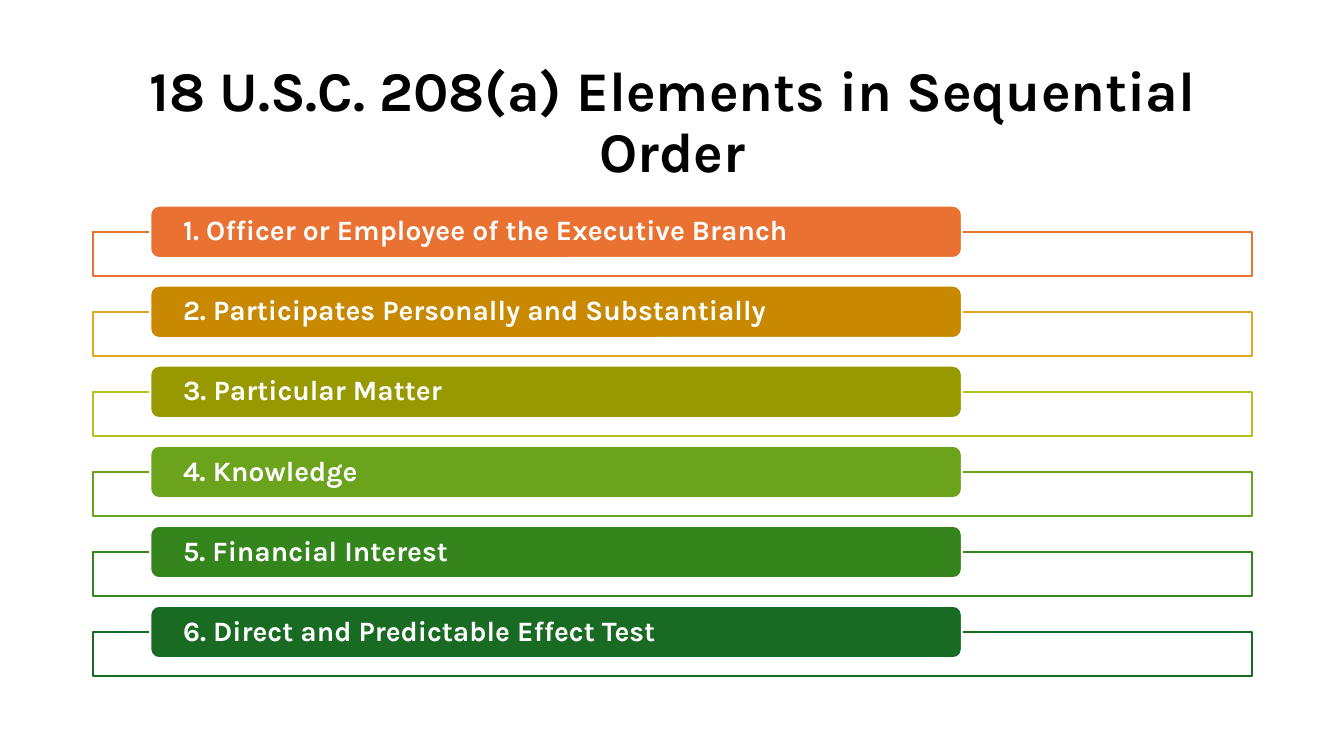
"""Build a slide listing the elements of 18 U.S.C. 208(a) in order."""
from dataclasses import dataclass

from lxml import etree
from pptx import Presentation, util as u
from pptx.dml.color import RGBColor
from pptx.enum import shapes, text
from pptx.oxml import ns
from pptx.shapes.autoshape import Shape
from pptx.slide import Slide
from pptx.text.text import TextFrame

FONT = "Karla"
BLACK = RGBColor(0x00, 0x00, 0x00)
WHITE = RGBColor(0xFF, 0xFF, 0xFF)
ORANGE = RGBColor(0xE9, 0x71, 0x32)
AMBER = RGBColor(0xC8, 0x88, 0x00)
GOLD = RGBColor(0xE0, 0xA6, 0x1D)
OLIVE = RGBColor(0x98, 0x98, 0x00)
LIME = RGBColor(0xB7, 0xC1, 0x1E)
LEAF = RGBColor(0x6B, 0xA3, 0x1D)
GREEN = RGBColor(0x34, 0x86, 0x1C)
FOREST = RGBColor(0x19, 0x6B, 0x24)

LEFT, WIDTH = 0.92, 11.5
FIRST_TOP, LAST_TOP, FRAME_HEIGHT = 2.3, 6.27, 0.44
BAR_LEFT, BAR_WIDTH, BAR_HEIGHT, BAR_RISE = 1.49, 8.05, 0.52, 0.26


@dataclass(frozen=True)
class Element:
    label: str
    bar: RGBColor
    frame: RGBColor


ELEMENTS = [
    Element("1. Officer or Employee of the Executive Branch", ORANGE, ORANGE),
    Element("2. Participates Personally and Substantially", AMBER, GOLD),
    Element("3. Particular Matter", OLIVE, LIME),
    Element("4. Knowledge", LEAF, LEAF),
    Element("5. Financial Interest", GREEN, GREEN),
    Element("6. Direct and Predictable Effect Test", FOREST, FOREST),
]


def write(tf: TextFrame, words: str, size: int, color: RGBColor,
          align: text.PP_ALIGN) -> None:
    """Set one bold, vertically centred paragraph."""
    tf.word_wrap = True
    tf.vertical_anchor = text.MSO_ANCHOR.MIDDLE
    p = tf.paragraphs[0]
    p.text = words
    p.alignment = align
    p.line_spacing = 0.9
    p.font.name = FONT
    p.font.size = u.Pt(size)
    p.font.bold = True
    p.font.color.rgb = color


def add_box(s: Slide, kind: shapes.MSO_SHAPE, left: float, top: float,
            width: float, height: float, fill: RGBColor, line: RGBColor) -> Shape:
    """Add a flat shape with a solid fill and outline."""
    sp = s.shapes.add_shape(kind, u.Inches(left), u.Inches(top),
                            u.Inches(width), u.Inches(height))
    sp.shadow.inherit = False
    sp.fill.solid()
    sp.fill.fore_color.rgb = fill
    sp.line.color.rgb = line
    sp.line.width = u.Pt(1.5)
    return sp


def add_element(s: Slide, element: Element, top: float) -> None:
    """Draw an outlined frame with its labelled bar on the top edge."""
    frame = add_box(s, shapes.MSO_SHAPE.RECTANGLE, LEFT, top, WIDTH,
                    FRAME_HEIGHT, WHITE, element.frame)
    color = frame.fill._xPr.find(ns.qn("a:solidFill"))[0]
    etree.SubElement(color, ns.qn("a:alpha"), val="90000")

    bar = add_box(s, shapes.MSO_SHAPE.ROUNDED_RECTANGLE, BAR_LEFT,
                  top - BAR_RISE, BAR_WIDTH, BAR_HEIGHT, element.bar, WHITE)
    tf = bar.text_frame
    tf.margin_left = tf.margin_right = u.Inches(0.3)
    tf.margin_top = tf.margin_bottom = 0
    write(tf, element.label, 20, WHITE, text.PP_ALIGN.LEFT)


def main() -> None:
    """Create and save the presentation."""
    prs = Presentation()
    prs.slide_width, prs.slide_height = u.Inches(13.33), u.Inches(7.5)
    s = prs.slides.add_slide(prs.slide_layouts[6])

    title = s.shapes.add_textbox(u.Inches(LEFT), u.Inches(0.61),
                                 u.Inches(WIDTH), u.Inches(1.24))
    write(title.text_frame, "18 U.S.C. 208(a) Elements in Sequential Order",
          40, BLACK, text.PP_ALIGN.CENTER)

    pitch = (LAST_TOP - FIRST_TOP) / (len(ELEMENTS) - 1)
    for i, element in enumerate(ELEMENTS):
        add_element(s, element, FIRST_TOP + i * pitch)

    prs.save("out.pptx")


if __name__ == "__main__":
    main()
